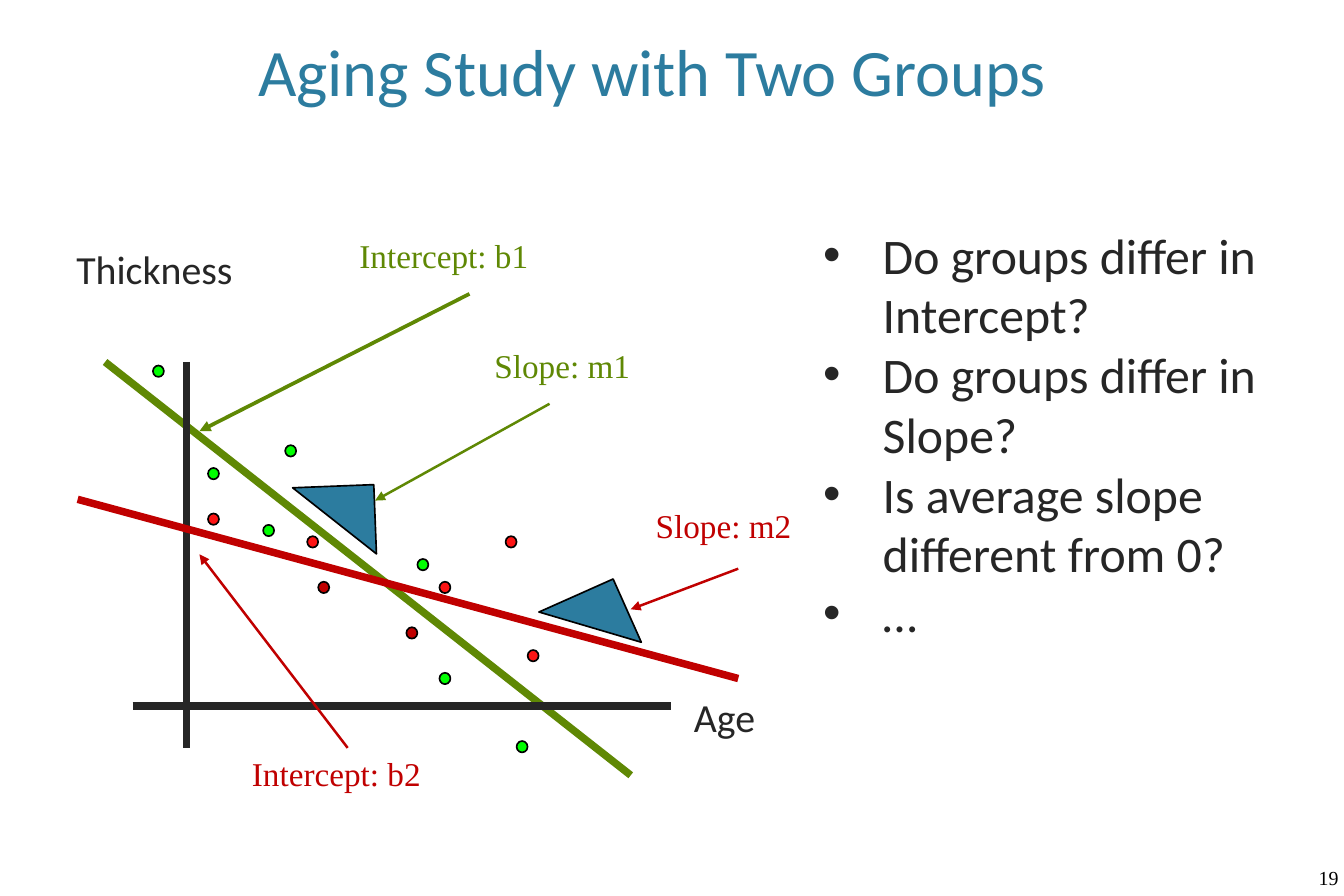
import pptx
import pptx.util
import pptx.dml.color
import pptx.enum.shapes
import pptx.enum.text
import pptx.oxml.ns
import lxml.etree

WIDE, HIGH = 11.25, 7.5
INK, BLUE, GREEN, RED = "262626", "2C7C9F", "5F8804", "C00000"
BRIGHT, LIME, BLACK = "FD1414", "00FF00", "000000"
SANS, SERIF = "Calibri", "Times New Roman"

TITLE = "Aging Study with Two Groups"
ASKS = [
    "Do groups differ in Intercept?",
    "Do groups differ in Slope?",
    "Is average slope different from 0?",
    "…",
]
LABELS = [
    ("19", 97.24, 96, 5.51, 4, 12, SERIF, BLACK),
    ("Thickness", 4.8, 26.67, 15.82, 6.67, 24, SANS, INK),
    ("Age", 50.76, 76.67, 7.11, 6.67, 24, SANS, INK),
    ("Intercept: b1", 25.87, 25.6, 14.49, 5.87, 20, SERIF, GREEN),
    ("Slope: m1", 35.91, 37.87, 12, 5.87, 20, SERIF, GREEN),
    ("Intercept: b2", 17.87, 83.47, 14.49, 5.87, 20, SERIF, RED),
    ("Slope: m2", 47.91, 55.73, 12, 5.87, 20, SERIF, RED),
]
LINES = [
    (7.82, 40.4, 46.93, 86.53, GREEN, 4.5),
    (13.87, 40.4, 13.87, 83.47, INK, 4.5),
    (9.87, 78.8, 49.96, 78.8, INK, 4.5),
    (5.78, 55.73, 54.93, 75.73, RED, 4.5),
]
ARROWS = [
    (14.84, 48.13, 34.93, 32.8, GREEN, 2.25),
    (27.91, 55.87, 40.89, 45.07, GREEN, 1.5),
    (46.93, 68, 54.93, 63.47, RED, 1.5),
    (14.84, 61.87, 25.87, 83.47, RED, 1.5),
]
WEDGES = [(21.87, 54.27, 177.8), (40.89, 66.13, 156)]
DOTS = {
    BRIGHT: [(5, 13), (14, 15), (26, 19), (32, 15), (34, 25)],
    RED: [(15, 19), (23, 23)],
    LIME: [(0, 0), (5, 9), (12, 7), (10, 14), (24, 17), (26, 27), (33, 33)],
}
LEFT, TOP, COL, ROW = 11.38, 40.8, 0.82, 1.27


def across(share):
    return pptx.util.Inches(WIDE * share / 100)


def down(share):
    return pptx.util.Inches(HIGH * share / 100)


def place(x, y, w, h):
    return across(x), down(y), across(w), down(h)


def color(code):
    return pptx.dml.color.RGBColor.from_string(code)


def add(node, tag, **attrs):
    return lxml.etree.SubElement(node, pptx.oxml.ns.qn(tag), attrs)


def write(slide, text, x, y, w, h, size, face, code):
    frame = slide.shapes.add_textbox(*place(x, y, w, h)).text_frame
    frame.word_wrap = True
    frame.text = text
    for para in frame.paragraphs:
        for run in para.runs:
            run.font.size = pptx.util.Pt(size)
            run.font.name = face
            run.font.color.rgb = color(code)
    return frame


def draw(slide, x1, y1, x2, y2, code, width):
    kind = pptx.enum.shapes.MSO_CONNECTOR.STRAIGHT
    line = slide.shapes.add_connector(
        kind, across(x1), down(y1), across(x2), down(y2))
    line.line.color.rgb = color(code)
    line.line.width = pptx.util.Pt(width)
    add(line._element.spPr, "a:effectLst")
    return line


def shape(slide, kind, x, y, w, h, code):
    item = slide.shapes.add_shape(kind, *place(x, y, w, h))
    item.shadow.inherit = False
    item.fill.solid()
    item.fill.fore_color.rgb = color(code)
    item.line.color.rgb = color(BLACK)
    item.line.width = pptx.util.Pt(1)
    return item


def main():
    deck = pptx.Presentation()
    deck.slide_width, deck.slide_height = across(100), down(100)
    slide = deck.slides.add_slide(deck.slide_layouts[6])
    forms = pptx.enum.shapes.MSO_SHAPE

    head = write(slide, TITLE, 6.04, 1.87, 84.98, 11.07, 40, SANS, BLUE)
    head.vertical_anchor = pptx.enum.text.MSO_ANCHOR.BOTTOM
    head.paragraphs[0].alignment = pptx.enum.text.PP_ALIGN.CENTER

    body = write(slide, "\n".join(ASKS), 60.36, 24.4, 37.07, 55.2,
                 30, SANS, INK)
    hang = pptx.util.Inches(0.5)
    for para in body.paragraphs:
        props = para._p.get_or_add_pPr()
        props.set("marL", str(hang))
        props.set("indent", str(-hang))
        add(props, "a:buFont", typeface="Arial")
        add(props, "a:buChar", char="•")

    for line in LINES:
        draw(slide, *line)
    for arrow in ARROWS:
        link = draw(slide, *arrow)
        add(link.line._get_or_add_ln(), "a:headEnd", type="triangle")
    for x, y, turn in WEDGES:
        wedge = shape(slide, forms.RIGHT_TRIANGLE, x, y, 6.04, 7.73, BLUE)
        wedge.rotation = turn
    for label in LABELS:
        write(slide, *label)
    for code, spots in DOTS.items():
        for col, row in spots:
            shape(slide, forms.OVAL, LEFT + col * COL, TOP + row * ROW,
                  COL, ROW, code)

    deck.save("out.pptx")


if __name__ == "__main__":
    main()
